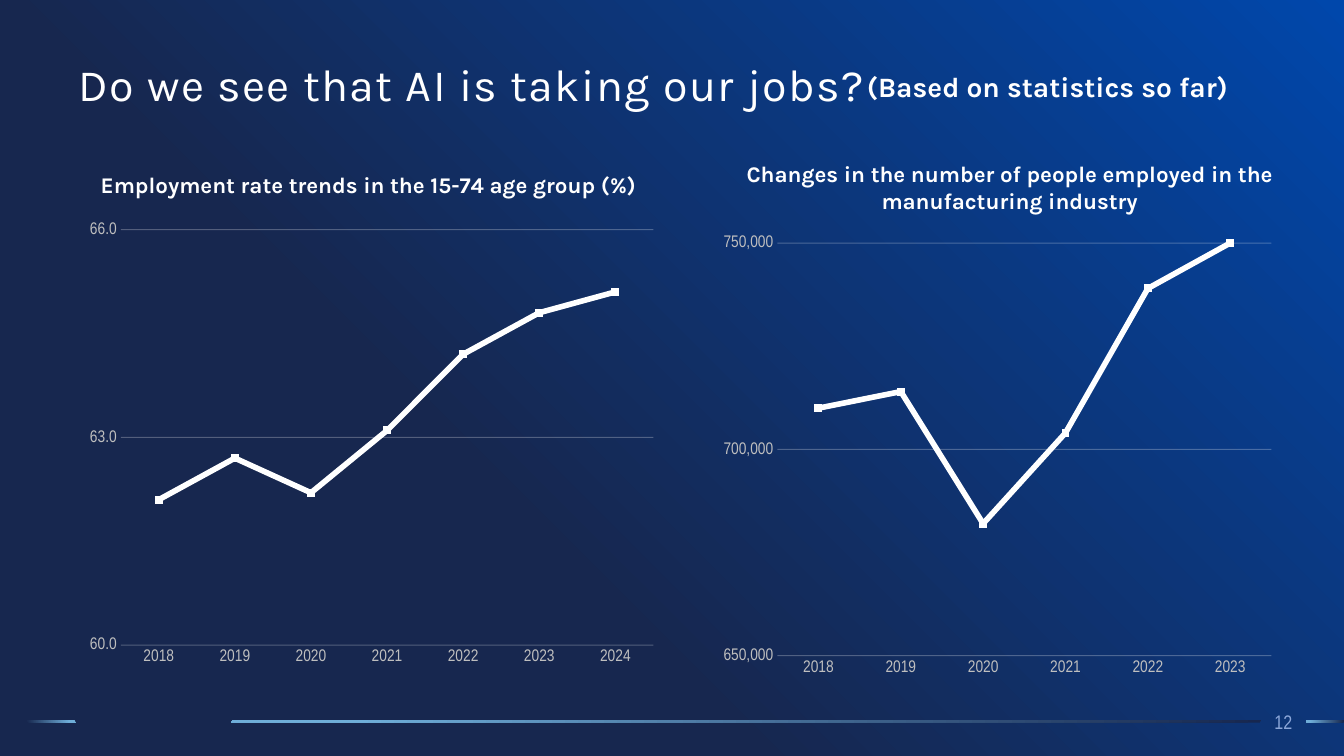
from dataclasses import dataclass

from lxml.etree import fromstring
from pptx import Presentation
from pptx.chart.data import CategoryChartData as Data
from pptx.dml.color import RGBColor as RGB
from pptx.enum.chart import XL_CHART_TYPE as Kind, XL_TICK_MARK as Tick
from pptx.enum.text import MSO_ANCHOR as Anchor, PP_ALIGN as Align
from pptx.oxml.ns import nsdecls, qn
from pptx.util import Inches, Pt


@dataclass(frozen=True)
class Theme:
    navy: RGB = RGB.from_string("17274F")
    blue: RGB = RGB.from_string("0047AB")
    sky: RGB = RGB.from_string("6FAED9")
    pale: RGB = RGB.from_string("8CA7D9")
    white: RGB = RGB.from_string("FFFFFF")
    gray: RGB = RGB.from_string("BFBFBF")
    main: str = "Karla"
    small: str = "Arial Narrow"
    title: int = 32
    note: int = 20
    head: int = 16
    page: int = 14
    axis: int = 12


THEME = Theme()


def shade(fill, angle, *stops):
    """Fill with a two-stop gradient; the angle runs counter-clockwise."""
    fill.gradient()
    fill.gradient_angle = angle
    for stop, (place, color) in zip(fill.gradient_stops, stops):
        stop.position = place
        stop.color.rgb = color


def style(font, name, size, color, bold=False):
    font.name, font.size, font.bold = name, Pt(size), bold
    font.color.rgb = color


def add_text(slide, box, text, size, name=THEME.main, color=THEME.white,
             bold=True, align=Align.CENTER, anchor=Anchor.TOP):
    frame = slide.shapes.add_textbox(*map(Inches, box)).text_frame
    frame.word_wrap = True
    frame.vertical_anchor = anchor
    para = frame.paragraphs[0]
    para.text = text
    para.alignment = align
    style(para.font, name, size, color, bold)
    return para


def add_title(slide, box):
    x, y, w, h = box
    para = add_text(slide, box, "Do we see that AI is taking our jobs?", THEME.title,
                    bold=False, align=Align.LEFT, anchor=Anchor.MIDDLE)
    para.line_spacing = 0.9
    para.runs[0]._r.get_or_add_rPr().set("spc", "100")
    add_text(slide, (x + 7.82, y + 0.24, w - 7.82, 0.44),
             "(Based on statistics so far)", THEME.note, align=Align.LEFT)


def set_plot(chart, box):
    """Fix the inner plot area as fractions of the chart."""
    parts = "".join(f'<c:{tag} val="{val}"/>' for tag, val in zip("xywh", box))
    layout = fromstring(
        f'<c:layout {nsdecls("c")}><c:manualLayout><c:layoutTarget val="inner"/>'
        f'<c:xMode val="edge"/><c:yMode val="edge"/>{parts}</c:manualLayout></c:layout>')
    area = chart._chartSpace.chart.plotArea
    for old in area.findall(qn("c:layout")):
        area.remove(old)
    area.insert(0, layout)


def add_trend(slide, box, plot, values, scale, form):
    """Line chart of yearly values from 2018 on; scale is low, high, step."""
    data = Data(number_format=form)
    data.categories = [str(2018 + i) for i in range(len(values))]
    data.add_series("Series 1", values)
    chart = slide.shapes.add_chart(Kind.LINE, *map(Inches, box), data).chart
    chart.has_legend = chart.has_title = False
    style(chart.font, THEME.small, THEME.axis, THEME.gray)
    set_plot(chart, plot)

    years, level = chart.category_axis, chart.value_axis
    for axis in (years, level):
        axis.major_tick_mark = axis.minor_tick_mark = Tick.NONE
        axis.format.line.fill.background()
        style(axis.tick_labels.font, THEME.small, THEME.axis, THEME.gray)
    years.has_major_gridlines = False
    level.minimum_scale, level.maximum_scale, level.major_unit = scale
    level.tick_labels.number_format = form
    level.tick_labels.number_format_is_linked = False
    level.has_major_gridlines = True
    grid = level.major_gridlines.format.line
    grid.width = Pt(0.75)
    grid.color.rgb = THEME.white
    color = level._element.find(".//" + qn("c:majorGridlines")).find(".//" + qn("a:srgbClr"))
    color.append(fromstring(f'<a:alpha {nsdecls("a")} val="25000"/>'))

    chart.plots[0].vary_by_categories = False
    trend = chart.plots[0].series[0]
    trend.smooth = False
    trend.marker.style = None
    line = trend.format.line
    line.color.rgb = THEME.white
    line.width = Pt(4)
    line._ln.set("cap", "rnd")


def add_bar(slide, top, low, y, angle):
    """Slanted bar between the x spans of its top and bottom edges."""
    path = [(top[1], y), (low[1], y + 0.03), (low[0], y + 0.03)]
    pen = slide.shapes.build_freeform(Inches(top[0]), Inches(y))
    pen.add_line_segments([(Inches(a), Inches(b)) for a, b in path], close=True)
    bar = pen.convert_to_shape()
    bar.shadow.inherit = False
    bar.line.fill.background()
    shade(bar.fill, angle, (0, THEME.navy), (0.88, THEME.sky))


def add_foot(slide, y):
    for top, low, angle in (
        ((0.26, 0.73), (0.28, 0.75), 0),
        ((2.31, 12.51), (2.29, 12.5), 180),
        ((12.95, 13.33), (12.96, 13.33), 180),
    ):
        add_bar(slide, top, low, y, angle)
    add_text(slide, (12.5, y - 0.16, 0.46, 0.36), "12", THEME.page, THEME.small,
             THEME.pale, bold=False, anchor=Anchor.MIDDLE)


def main():
    deck = Presentation()
    deck.slide_width, deck.slide_height = Inches(13.33), Inches(7.5)
    slide = deck.slides.add_slide(deck.slide_layouts[6])
    shade(slide.background.fill, 45, (0.36, THEME.navy), (1, THEME.blue))
    add_foot(slide, 7.14)

    add_trend(slide, (6.26, 2.14, 6.5, 4.68), (0.223, 0.058, 0.754, 0.875),
              (710000, 714000, 682000, 704000, 739000, 750000),
              (650000, 750000, 50000), "#,##0")
    add_text(slide, (6.96, 1.54, 6.11, 0.64),
             "Changes in the number of people employed in the manufacturing industry",
             THEME.head)

    add_trend(slide, (0.68, 2.11, 5.95, 4.68), (0.087, 0.036, 0.888, 0.881),
              (62.1, 62.7, 62.2, 63.1, 64.2, 64.8, 65.1), (60, 66, 3), "0.0")
    head = add_text(slide, (0.76, 1.61, 5.79, 0.4),
                    "Employment rate trends in the 15-74 age group (%)", THEME.head)
    head.line_spacing = 1.15

    add_title(slide, (0.68, 0.4, 12.08, 0.93))
    deck.save("out.pptx")


if __name__ == "__main__":
    main()
